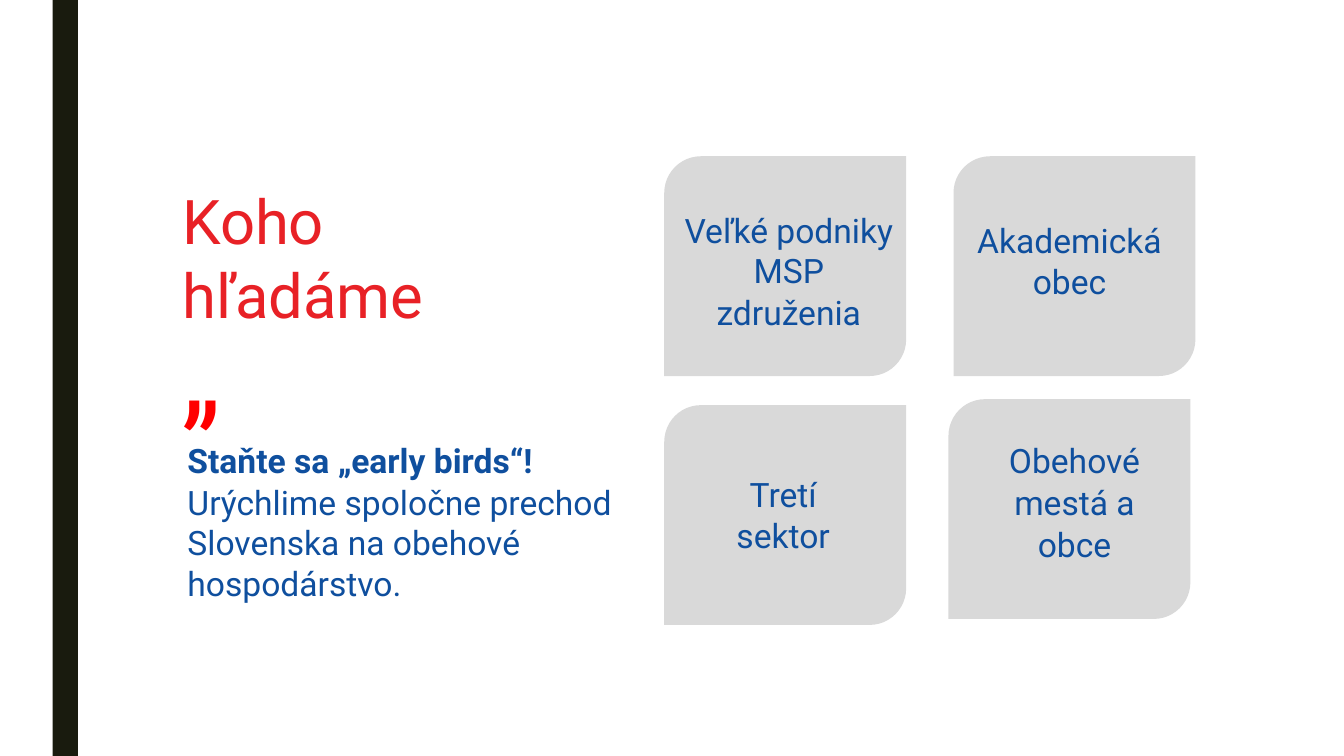
from lxml import etree
from pptx import Presentation
from pptx.dml.color import RGBColor
from pptx.enum import shapes, text
from pptx.oxml import ns
from pptx.util import Pt

RED = RGBColor(0xE8, 0x21, 0x26)
QUOTE_RED = RGBColor(0xFF, 0x00, 0x00)
BLUE = RGBColor(0x0F, 0x4F, 0x9E)
GREY = RGBColor(0xD9, 0xD9, 0xD9)
DARK = RGBColor(0x19, 0x1B, 0x0E)

# Content: boxes are left, top, width, height in points
SLIDE_SIZE = (960, 540)
BAR = (37.6, 0, 18, 540)
HEADING = ("Koho hľadáme", (130.3, 128.9, 270, 108))
QUOTE_MARK = ("„", (130.3, 213.8, 131.8, 98.6))
APPEAL = (
    ["Staňte sa „early birds“!",
     "Urýchlime spoločne prechod Slovenska na obehové hospodárstvo."],
    (133.9, 312.5, 306, 148.3),
)
CARD_SIZE = (172.8, 157)
# Card corner, label lines, label box
GROUPS = [
    ((474.5, 289.4), ["Tretí", "sektor"], (467.3, 336.2, 184.3, 60.5)),
    ((474.5, 111.6), ["Veľké podniky MSP", "združenia"], (484.6, 147.6, 157.7, 89.3)),
    ((681.1, 111.6), ["Akademická", "obec"], (646.6, 154.8, 234.7, 60.5)),
    ((677.5, 285.1), ["Obehové", "mestá a", "obce"], (650.2, 312.5, 234.7, 90)),
]

FRAME = {
    "word_wrap": True,
    "auto_size": text.MSO_AUTO_SIZE.NONE,
    "vertical_anchor": text.MSO_ANCHOR.TOP,
    "margin_left": 0, "margin_right": 0,
    "margin_top": Pt(2), "margin_bottom": 0,
}
LEFT, CENTER = text.PP_ALIGN.LEFT, text.PP_ALIGN.CENTER


def apply(target, values):
    for name, value in values.items():
        setattr(target, name, value)


def place(part, box):
    apply(part, dict(zip(("left", "top", "width", "height"), map(Pt, box))))


def write(part, lines, size, color, align=LEFT, spacing=None):
    frame = part.text_frame
    apply(frame, FRAME)
    for index, line in enumerate(lines):
        paragraph = frame.paragraphs[0] if index == 0 else frame.add_paragraph()
        properties = paragraph._p.get_or_add_pPr()
        properties.set("marL", "0")
        properties.set("indent", "0")
        etree.SubElement(properties, ns.qn("a:buNone"))
        apply(paragraph, {"alignment": align, "space_before": Pt(1 if index else 0)})
        run = paragraph.add_run()
        run.text = line
        apply(run.font, {"name": "Roboto", "size": Pt(size), "bold": False})
        run.font.color.rgb = color
        if spacing is not None:
            run.font._element.set("spc", str(spacing))


def draw(kind, box, color):
    part = slide.shapes.add_shape(kind, *map(Pt, box))
    part.shadow.inherit = False
    part.fill.solid()
    part.fill.fore_color.rgb = color
    part.line.fill.background()


deck = Presentation()
apply(deck, dict(zip(("slide_width", "slide_height"), map(Pt, SLIDE_SIZE))))
slide = deck.slides.add_slide(deck.slide_layouts[1])

# Side bar
draw(shapes.MSO_SHAPE.RECTANGLE, BAR, DARK)

# Heading, quotation mark and appeal
heading = slide.shapes.title
place(heading, HEADING[1])
write(heading, [HEADING[0]], 44, RED, spacing=-10)

quote_mark = slide.shapes.add_textbox(*map(Pt, QUOTE_MARK[1]))
write(quote_mark, [QUOTE_MARK[0]], 80, QUOTE_RED, spacing=300)

appeal = slide.placeholders[1]
place(appeal, APPEAL[1])
write(appeal, APPEAL[0], 24, BLUE)
appeal.text_frame.paragraphs[0].runs[0].font.bold = True

# Cards of the groups sought
for corner, lines, label_box in GROUPS:
    draw(shapes.MSO_SHAPE.ROUND_2_DIAG_RECTANGLE, corner + CARD_SIZE, GREY)
    label = slide.shapes.add_textbox(*map(Pt, label_box))
    write(label, lines, 24, BLUE, CENTER)

deck.save("out.pptx")
